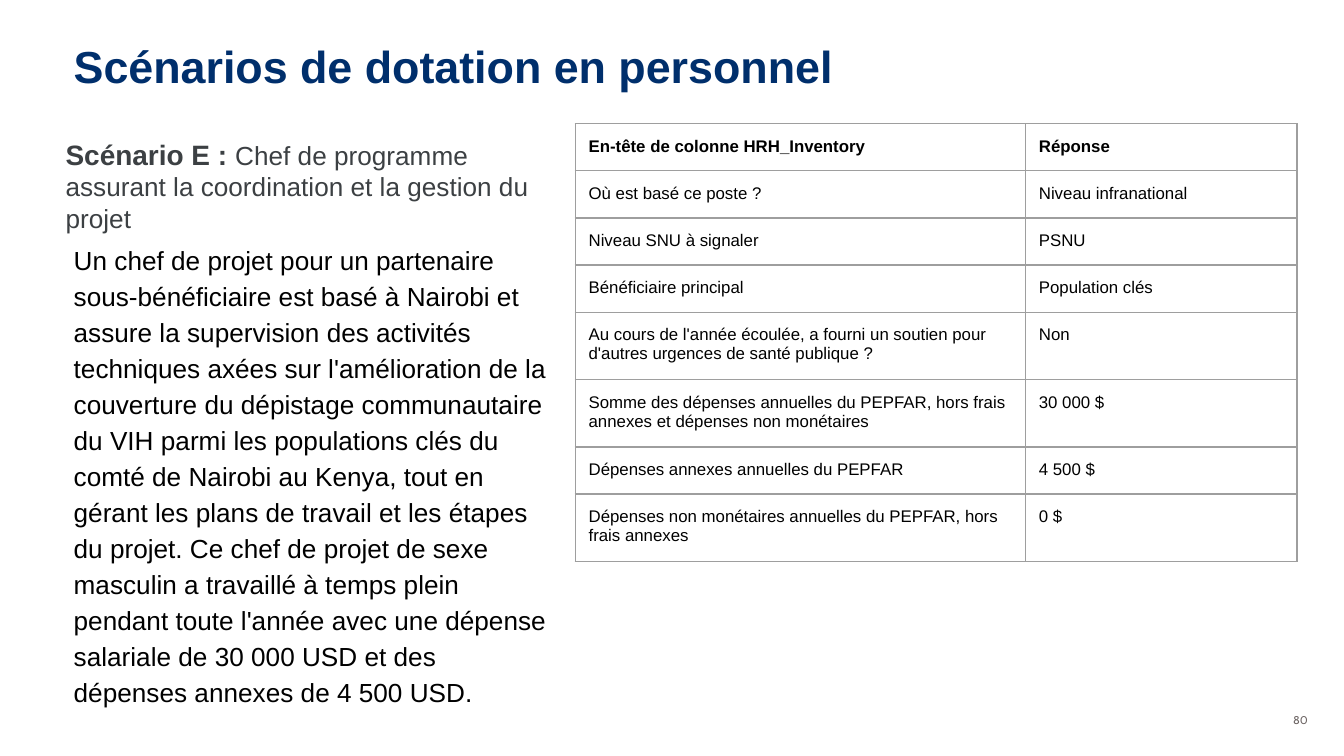
from dataclasses import dataclass

from lxml.etree import SubElement
from pptx import Presentation
from pptx.dml.color import RGBColor
from pptx.enum.text import MSO_ANCHOR as Anchor, PP_ALIGN as Align
from pptx.oxml.ns import qn
from pptx.util import Inches, Pt


@dataclass(frozen=True)
class Theme:
    font: str = "Arial"
    number_font: str = "Cabin"
    navy: str = "002F6C"
    charcoal: str = "3C4043"
    gray: str = "6C6463"
    black: str = "000000"
    white: str = "FFFFFF"
    border: str = "9E9E9E"
    title: int = 24
    lead: int = 15
    body: int = 14
    cell: int = 9
    number: int = 6


THEME = Theme()
CELL = 0.1
COLUMNS, ROWS = 100, 56.25

SCENARIO = (
    "Un chef de projet pour un partenaire sous-bénéficiaire est basé à Nairobi "
    "et assure la supervision des activités techniques axées sur l'amélioration "
    "de la couverture du dépistage communautaire du VIH parmi les populations "
    "clés du comté de Nairobi au Kenya, tout en gérant les plans de travail et "
    "les étapes du projet. Ce chef de projet de sexe masculin a travaillé à temps "
    "plein pendant toute l'année avec une dépense salariale de 30 000 USD et des "
    "dépenses annexes de 4 500 USD."
)
INVENTORY = [
    ("En-tête de colonne HRH_Inventory", "Réponse"),
    ("Où est basé ce poste ?", "Niveau infranational"),
    ("Niveau SNU à signaler", "PSNU"),
    ("Bénéficiaire principal", "Population clés"),
    ("Au cours de l'année écoulée, a fourni un soutien pour "
     "d'autres urgences de santé publique ?", "Non"),
    ("Somme des dépenses annuelles du PEPFAR, hors frais annexes "
     "et dépenses non monétaires", "30 000 $"),
    ("Dépenses annexes annuelles du PEPFAR", "4 500 $"),
    ("Dépenses non monétaires annuelles du PEPFAR, hors frais annexes", "0 $"),
]
ONE_LINE, TWO_LINES = 3.5, 5
INVENTORY_ROWS = [ONE_LINE] * 4 + [TWO_LINES] * 2 + [ONE_LINE, TWO_LINES]


def grid(count):
    return Inches(count * CELL)


def add_span(para, text, size=THEME.body, color=THEME.black, bold=False, font=THEME.font):
    span = para.add_run()
    span.text = text
    span.font.size = Pt(size)
    span.font.name = font
    span.font.bold = bold
    span.font.color.rgb = RGBColor.from_string(color)


class SlideBuilder:
    def __init__(self, deck, theme):
        self.theme = theme
        self.page = deck.slides.add_slide(deck.slide_layouts[6])
        self.page.background.fill.solid()
        self.page.background.fill.fore_color.rgb = RGBColor.from_string(theme.white)

    def text(self, area, spans, anchor=Anchor.TOP, align=Align.LEFT, inset=1, spacing=None, gap=0):
        box = self.page.shapes.add_textbox(*map(grid, area))
        frame = box.text_frame
        frame.word_wrap = True
        frame.vertical_anchor = anchor
        frame.margin_left = frame.margin_right = grid(1)
        frame.margin_top = frame.margin_bottom = grid(inset)
        para = frame.paragraphs[0]
        para.alignment = align
        para.line_spacing = spacing
        para.space_before = para.space_after = Pt(gap)
        for text, style in spans:
            add_span(para, text, **style)

    def table(self, left, top, widths, heights, records):
        table = self.page.shapes.add_table(
            len(heights), len(widths),
            *map(grid, (left, top, sum(widths), sum(heights)))).table
        table.first_row = table.horz_banding = False
        for column, width in zip(table.columns, widths):
            column.width = grid(width)
        for index, (row, height, record) in enumerate(zip(table.rows, heights, records)):
            row.height = grid(height)
            for cell, text in zip(row.cells, record):
                self.cell(cell, text, bold=index == 0)

    def cell(self, cell, text, bold):
        cell.margin_left = cell.margin_right = grid(1)
        cell.margin_top = cell.margin_bottom = grid(1)
        add_span(cell.text_frame.paragraphs[0], text, size=self.theme.cell, bold=bold)
        properties = cell._tc.get_or_add_tcPr()
        for edge in ("a:lnL", "a:lnR", "a:lnT", "a:lnB"):
            line = SubElement(properties, qn(edge), w=str(Pt(0.75)))
            fill = SubElement(line, qn("a:solidFill"))
            SubElement(fill, qn("a:srgbClr"), val=self.theme.border)
        cell.fill.background()


def main():
    deck = Presentation()
    deck.slide_width, deck.slide_height = grid(COLUMNS), grid(ROWS)
    slide = SlideBuilder(deck, THEME)
    slide.text((4.5, 2.9, 85, 5), [
        ("Scénarios de dotation en personnel",
         dict(size=THEME.title, color=THEME.navy, bold=True)),
    ], anchor=Anchor.BOTTOM)
    slide.text((75, 52.6, 23.3, 2), [
        ("80", dict(size=THEME.number, color=THEME.gray, font=THEME.number_font)),
    ], anchor=Anchor.MIDDLE, align=Align.RIGHT, inset=0.5)
    slide.text((3.9, 9.2, 39.6, 9.3), [
        ("Scénario E : ", dict(size=THEME.lead, color=THEME.charcoal, bold=True)),
        ("Chef de programme assurant la coordination et la gestion du projet",
         dict(color=THEME.charcoal)),
    ])
    slide.table(42.8, 9.2, (33.5, 20.2), INVENTORY_ROWS, INVENTORY)
    slide.text((4.5, 16.8, 37.2, 34.2), [(SCENARIO, {})], spacing=1.15, gap=12)
    deck.save("out.pptx")


if __name__ == "__main__":
    main()
